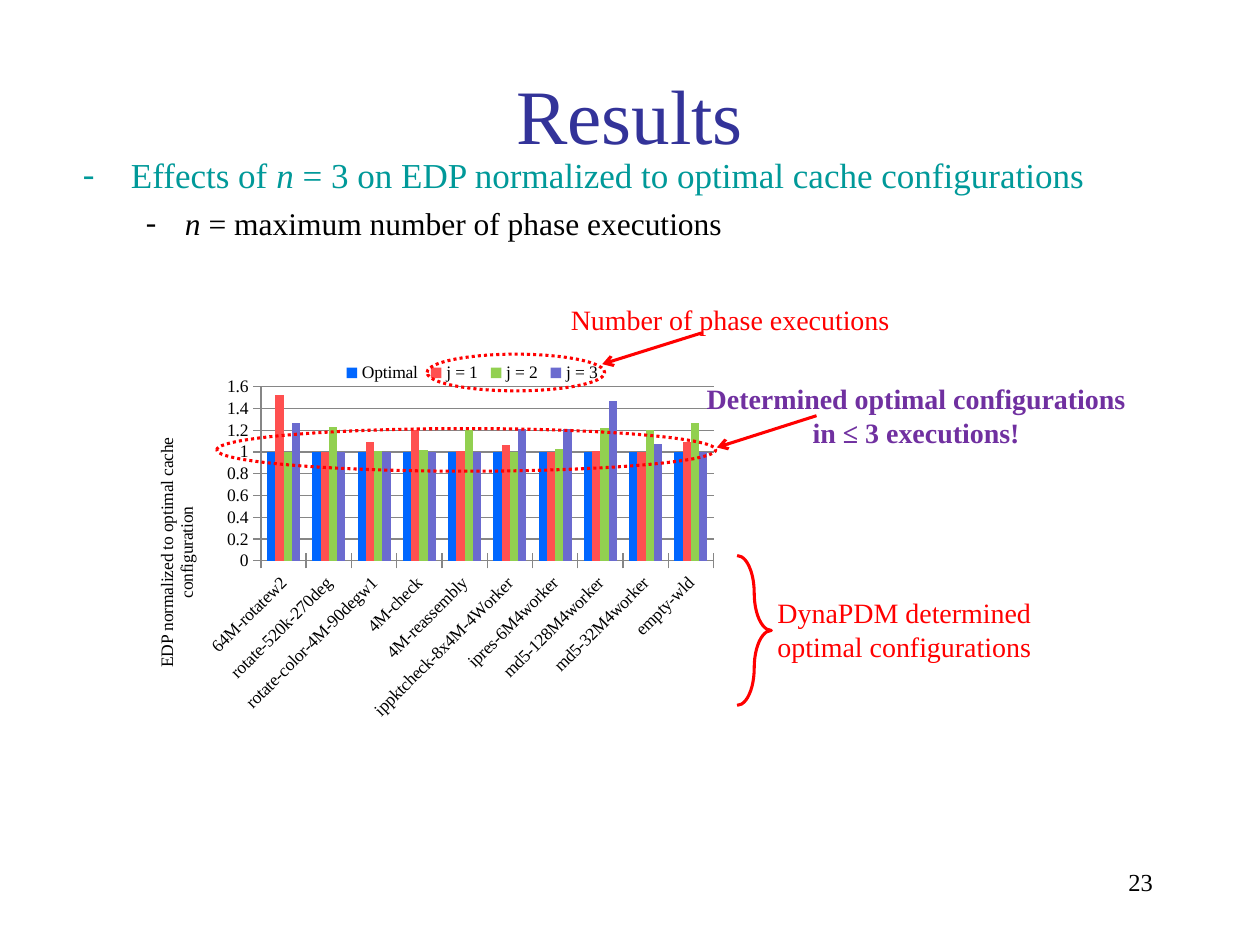
import dataclasses

import lxml.etree
import pptx
import pptx.chart.data
import pptx.dml.color
import pptx.enum.chart
import pptx.enum.dml
import pptx.enum.shapes
import pptx.enum.text
import pptx.oxml
import pptx.oxml.ns
import pptx.util

Cm, Pt = pptx.util.Cm, pptx.util.Pt
RGBColor = pptx.dml.color.RGBColor
ALIGN = pptx.enum.text.PP_ALIGN
SHAPE = pptx.enum.shapes.MSO_SHAPE
qn = pptx.oxml.ns.qn

FONT = "Times New Roman"
BLACK = RGBColor(0x00, 0x00, 0x00)
NAVY = RGBColor(0x33, 0x33, 0x99)
TEAL = RGBColor(0x00, 0x99, 0x99)
RED = RGBColor(0xFF, 0x00, 0x00)
PURPLE = RGBColor(0x70, 0x30, 0xA0)
GRAY = RGBColor(0x86, 0x86, 0x86)

CATEGORIES = [
    "64M-rotatew2", "rotate-520k-270deg", "rotate-color-4M-90degw1", "4M-check",
    "4M-reassembly", "ippktcheck-8x4M-4Worker", "ipres-6M4worker",
    "md5-128M4worker", "md5-32M4worker", "empty-wld",
]
SERIES = [
    ("Optimal", RGBColor(0x00, 0x66, 0xFF), [1] * len(CATEGORIES)),
    ("j = 1", RGBColor(0xFF, 0x50, 0x50),
     [1.52, 1, 1.09, 1.2, 1.01, 1.06, 1, 1.01, 1, 1.09]),
    ("j = 2", RGBColor(0x92, 0xD0, 0x50),
     [1, 1.23, 1.01, 1.02, 1.2, 1, 1.03, 1.22, 1.2, 1.27]),
    ("j = 3", RGBColor(0x6B, 0x6B, 0xCF),
     [1.27, 1, 1, 1, 1, 1.21, 1.21, 1.47, 1.07, 1]),
]


@dataclasses.dataclass
class Box:
    """Left, top, width and height in centimetres."""
    left: float
    top: float
    width: float
    height: float

    def inside(self, left, top, width, height):
        return Box(self.left + left, self.top + top, width, height)

    def lengths(self):
        return [Cm(n) for n in (self.left, self.top, self.width, self.height)]


def style(font, size, color, bold=False):
    font.name, font.size, font.bold = FONT, Pt(size), bold
    font.color.rgb = color


def add_text(page, box, lines, size, color, align=ALIGN.CENTER, bold=False,
             wrap=True, anchor=pptx.enum.text.MSO_ANCHOR.TOP):
    frame = page.shapes.add_textbox(*box.lengths()).text_frame
    frame.word_wrap = wrap
    frame.vertical_anchor = anchor
    frame.text = "\n".join(lines)
    for para in frame.paragraphs:
        para.alignment = align
        for span in para.runs:
            style(span.font, size, color, bold)


def add_outline(page, kind, box, dash=None):
    shape = page.shapes.add_shape(kind, *box.lengths())
    shape.shadow.inherit = False
    shape.fill.background()
    shape.line.color.rgb = RED
    shape.line.width = Pt(1.75)
    if dash:
        shape.line.dash_style = dash
    return shape


def add_arrow(page, left, top, run, drop):
    arrow = page.shapes.add_connector(
        pptx.enum.shapes.MSO_CONNECTOR.STRAIGHT,
        Cm(left), Cm(top), Cm(left + run), Cm(top + drop))
    arrow.line.color.rgb = RED
    arrow.line.width = Pt(1.75)
    properties = arrow.element.spPr
    line = properties.find(qn("a:ln"))
    lxml.etree.SubElement(line, qn("a:tailEnd"), type="arrow")
    lxml.etree.SubElement(properties, qn("a:effectLst"))


def add_bullets(page, box):
    frame = page.shapes.add_textbox(*box.lengths()).text_frame
    frame.word_wrap = True
    items = [
        (["Effects of ", "n ", "= 3 on EDP normalized to optimal cache configurations"],
         20, TEAL, 0.97, 0.97, 0),
        (["n ", "= maximum number of phase executions"], 18, BLACK, 2.06, 0.79, 5),
    ]
    for index, (parts, size, color, margin, hang, gap) in enumerate(items):
        para = frame.add_paragraph() if index else frame.paragraphs[0]
        properties = para._p.get_or_add_pPr()
        properties.set("marL", str(Cm(margin)))
        properties.set("indent", str(-Cm(hang)))
        lxml.etree.SubElement(properties, qn("a:buFont"), typeface=FONT)
        lxml.etree.SubElement(properties, qn("a:buChar"), char="-")
        para.level = index
        para.space_before = Pt(gap)
        for part in parts:
            span = para.add_run()
            span.text = part
            style(span.font, size, color)
            span.font.italic = part == "n "


def set_layout(element, inner=False, **places):
    """Fix a chart part at fractions (x, y, w, h) of the chart."""
    for old in element.findall(qn("c:layout")):
        element.remove(old)
    layout = lxml.etree.Element(qn("c:layout"))
    manual = lxml.etree.SubElement(layout, qn("c:manualLayout"))
    if inner:
        lxml.etree.SubElement(manual, qn("c:layoutTarget"), val="inner")
    for key in ("x", "y"):
        lxml.etree.SubElement(manual, qn(f"c:{key}Mode"), val="edge")
    for key, value in places.items():
        lxml.etree.SubElement(manual, qn(f"c:{key}"), val=str(value))
    before = [child for child in element
              if child.tag in (qn("c:tx"), qn("c:legendPos"))]
    element.insert(len(before), layout)


def add_edp_chart(page, box):
    data = pptx.chart.data.CategoryChartData()
    data.categories = CATEGORIES
    for name, _, values in SERIES:
        data.add_series(name, values)
    chart = page.shapes.add_chart(
        pptx.enum.chart.XL_CHART_TYPE.COLUMN_CLUSTERED, *box.lengths(), data).chart
    style(chart.font, 10, BLACK)
    chart.has_title = False

    # Columns
    plot = chart.plots[0]
    plot.gap_width, plot.overlap, plot.vary_by_categories = 150, 0, False
    for series, (_, color, _) in zip(plot.series, SERIES):
        series.format.fill.solid()
        series.format.fill.fore_color.rgb = color

    # Axes
    values, categories = chart.value_axis, chart.category_axis
    values.minimum_scale, values.maximum_scale, values.major_unit = 0, 1.6, 0.2
    values.tick_labels.number_format = "General"
    values.tick_labels.number_format_is_linked = False
    values.has_major_gridlines = True
    for line in (values.major_gridlines.format.line, values.format.line,
                 categories.format.line):
        line.color.rgb = GRAY
        line.width = Pt(0.75)
    for axis in (values, categories):
        axis.major_tick_mark = pptx.enum.chart.XL_TICK_MARK.CROSS
        style(axis.tick_labels.font, 10, BLACK)
    slanted = categories._element.find(qn("c:txPr")).find(qn("a:bodyPr"))
    slanted.set("rot", "-2700000")
    slanted.set("vert", "horz")

    title = values.axis_title
    title.text_frame.text = "EDP normalized to optimal cache configuration"
    style(title.text_frame.paragraphs[0].runs[0].font, 10, BLACK)

    # Legend and placing
    chart.has_legend = True
    chart.legend.position = pptx.enum.chart.XL_LEGEND_POSITION.TOP
    chart.legend.include_in_layout = False
    style(chart.legend.font, 10, BLACK)
    set_layout(chart.legend._element, x=0.36, y=0.07, w=0.44, h=0.07)
    set_layout(title._element, x=0.05, y=0.26)
    set_layout(plot._element.getparent(), inner=True, x=0.23, y=0.14, w=0.75, h=0.44)


def add_callout(page, box, lines, color, ring, arrow, bold=False):
    """Text with an arrow to a dotted ring; ring and arrow are offsets from the box."""
    add_outline(page, SHAPE.OVAL, box.inside(*ring),
                pptx.enum.dml.MSO_LINE.ROUND_DOT)
    left, top, run, drop = arrow
    add_arrow(page, box.left + left, box.top + top, run, drop)
    add_text(page, box, lines, 16, color, bold=bold, wrap=False)


def add_brace_note(page, box):
    brace = add_outline(page, SHAPE.RIGHT_BRACE, box.inside(0, 0, 0.69, box.height))
    brace.adjustments[0] = 1.1
    add_text(page, box.inside(0.51, 0.69, 5.72, 1.63),
             ["DynaPDM determined", "optimal configurations"], 16, RED, wrap=False)


def main():
    deck = pptx.Presentation()
    deck.slide_width, deck.slide_height = Cm(25.4), Cm(19.05)
    page = deck.slides.add_slide(deck.slide_layouts[6])

    add_text(page, Box(1.9, 0.71, 21.59, 3.18), ["Results"], 44, NAVY,
             anchor=pptx.enum.text.MSO_ANCHOR.MIDDLE)
    add_bullets(page, Box(1.42, 2.97, 22.12, 2.26))
    add_text(page, Box(18.21, 17.35, 5.28, 1.27), ["23"], 14, BLACK, ALIGN.RIGHT)
    add_edp_chart(page, Box(2.46, 6.68, 12.17, 7.98))
    add_brace_note(page, Box(14.86, 11.2, 6.23, 3.02))
    add_callout(page, Box(11.2, 5.97, 7.04, 0.94), ["Number of phase executions"], RED,
                ring=(-2.59, 1.17, 3.58, 0.74), arrow=(2.95, 0.74, -2.01, 0.63))
    add_callout(page, Box(13.86, 7.57, 9.22, 1.63),
                ["Determined optimal configurations", "in ≤ 3 executions!"], PURPLE,
                ring=(-9.49, 1.07, 10.06, 0.86), arrow=(2.6, 0.81, -2.01, 0.64),
                bold=True)
    deck.save("out.pptx")


if __name__ == "__main__":
    main()
